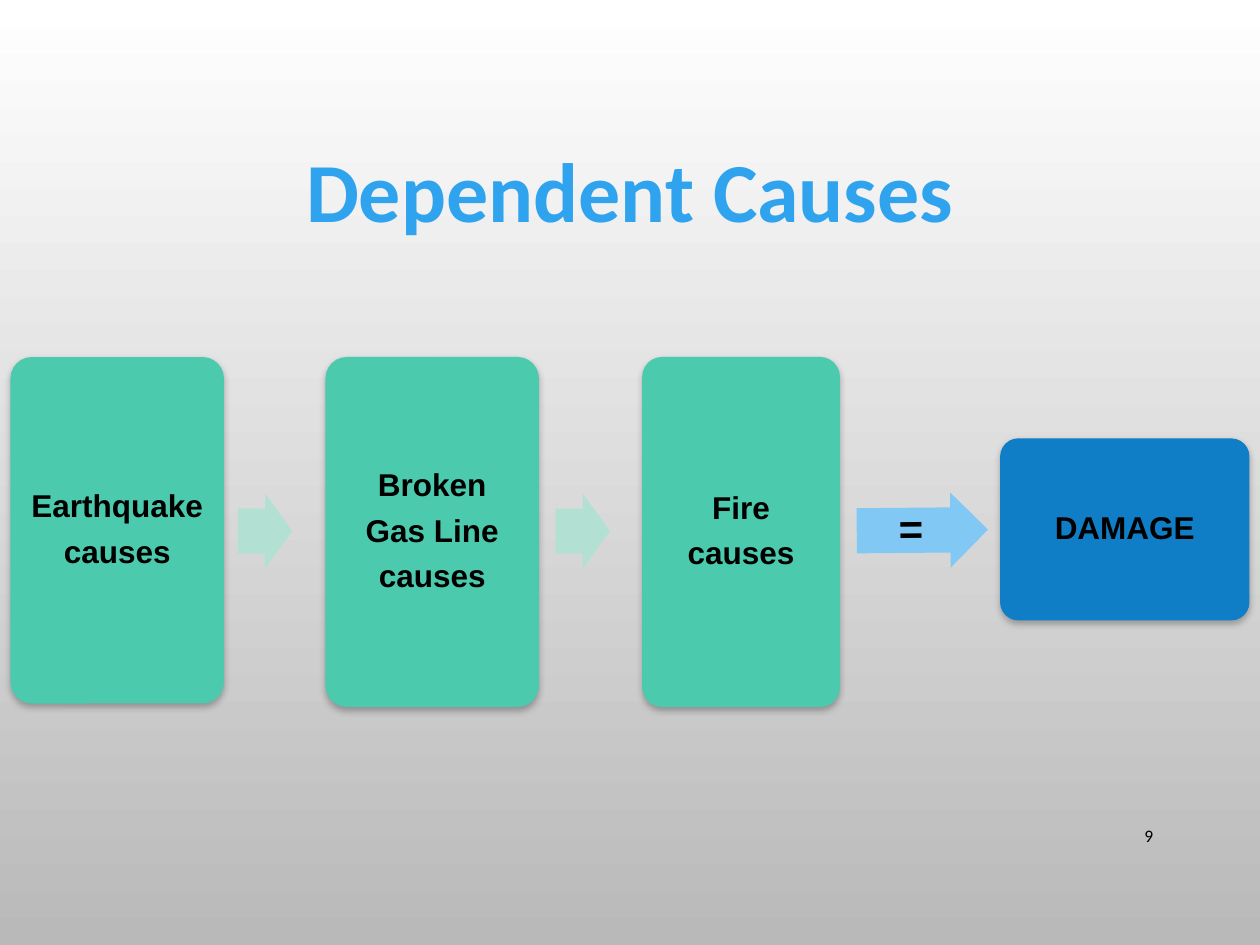
from lxml.etree import SubElement
from pptx import Presentation
from pptx.dml.color import RGBColor
from pptx.enum.shapes import MSO_SHAPE
from pptx.enum.text import MSO_ANCHOR, PP_ALIGN
from pptx.oxml.ns import qn
from pptx.util import Pt

COLORS = {
    "top": "FFFFFF",
    "bottom": "B9B9B9",
    "title": "2FA3EE",
    "text": "000000",
    "cause": "4BCAAD",
    "link": "B2E1D3",
    "equals": "82C8F5",
    "damage": "107EC6",
}
LABEL = {"name": "Arial", "size": Pt(18), "bold": True}
EQUALS = {**LABEL, "size": Pt(24)}
TITLE = {"name": "Calibri", "size": Pt(48), "bold": True}
NUMBER = {"name": "Calibri", "size": Pt(10)}
CENTERED = {"alignment": PP_ALIGN.CENTER, "line_spacing": 0.9}
SPACED = {**CENTERED, "space_after": Pt(6.5)}
RIGHT = {"alignment": PP_ALIGN.RIGHT}


def rgb(role):
    return RGBColor.from_string(COLORS[role])


def apply_format(target, values):
    for attribute, value in values.items():
        setattr(target, attribute, value)


def write_lines(holder, lines, font, layout, insets=(7.2, 3.6, 7.2, 3.6), color="text"):
    frame = holder.text_frame
    left, top, right, bottom = map(Pt, insets)
    apply_format(frame, {
        "word_wrap": True, "vertical_anchor": MSO_ANCHOR.MIDDLE,
        "margin_left": left, "margin_top": top,
        "margin_right": right, "margin_bottom": bottom,
    })
    for index, line in enumerate(lines):
        paragraph = frame.add_paragraph() if index else frame.paragraphs[0]
        apply_format(paragraph, layout)
        run = paragraph.add_run()
        run.text = line
        apply_format(run.font, font)
        run.font.color.rgb = rgb(color)


def add_text(slide, box, line, font, layout, color="text"):
    holder = slide.shapes.add_textbox(*map(Pt, box))
    write_lines(holder, [line], font, layout, color=color)


def add_block(slide, preset, box, color, adjustments):
    block = slide.shapes.add_shape(preset, *map(Pt, box))
    block.shadow.inherit = False
    block.fill.solid()
    block.fill.fore_color.rgb = rgb(color)
    block.line.fill.background()
    for index, value in enumerate(adjustments):
        block.adjustments[index] = value
    return block


def add_card(slide, box, color, lines):
    card = add_block(slide, MSO_SHAPE.ROUNDED_RECTANGLE, box, color, [0.1])
    effects = card._element.spPr.find(qn("a:effectLst"))
    shadow = SubElement(effects, qn("a:outerShdw"), blurRad=str(Pt(4)),
                        dist=str(Pt(2)), dir="5400000", rotWithShape="0")
    black = SubElement(shadow, qn("a:srgbClr"), val=COLORS["text"])
    SubElement(black, qn("a:alpha"), val="28000")
    write_lines(card, lines, LABEL, SPACED, insets=(4.5,) * 4)


def add_arrow(slide, box, color, rotation):
    arrow = add_block(slide, MSO_SHAPE.RIGHT_ARROW, box, color, [0.6, 0.5])
    arrow.rotation = rotation
    return arrow


def paint_background(slide):
    fill = slide.background.fill
    fill.gradient()
    fill.gradient_angle = 270
    for stop, role in zip(fill.gradient_stops, ("top", "bottom")):
        stop.color.rgb = rgb(role)


def main():
    deck = Presentation()
    deck.slide_width, deck.slide_height = Pt(720), Pt(540)
    slide = deck.slides.add_slide(deck.slide_layouts[6])
    paint_background(slide)
    add_text(slide, (54, 48.5, 612, 126), "Dependent Causes", TITLE, CENTERED, "title")

    causes = [
        (6, 122, 198, ["Earthquake", "causes"]),
        (186, 122, 200, ["Broken", "Gas Line", "causes"]),
        (367, 113, 200, ["Fire", "causes"]),
    ]
    for left, width, height, lines in causes:
        add_card(slide, (left, 204, width, height), "cause", lines)
    for left, rotation in ((136, 0.3), (317.5, 0)):
        add_arrow(slide, (left, 282, 31, 43), "link", rotation)

    equals = add_arrow(slide, (489.6, 281.5, 75, 43), "equals", 359.5)
    write_lines(equals, ["="], EQUALS, SPACED, insets=(0, 0, 0, 0))
    add_card(slide, (571.5, 250.5, 142.5, 104), "damage", ["DAMAGE"])
    add_text(slide, (620.6, 463, 45.4, 29), "9", NUMBER, RIGHT)
    deck.save("out.pptx")


if __name__ == "__main__":
    main()
